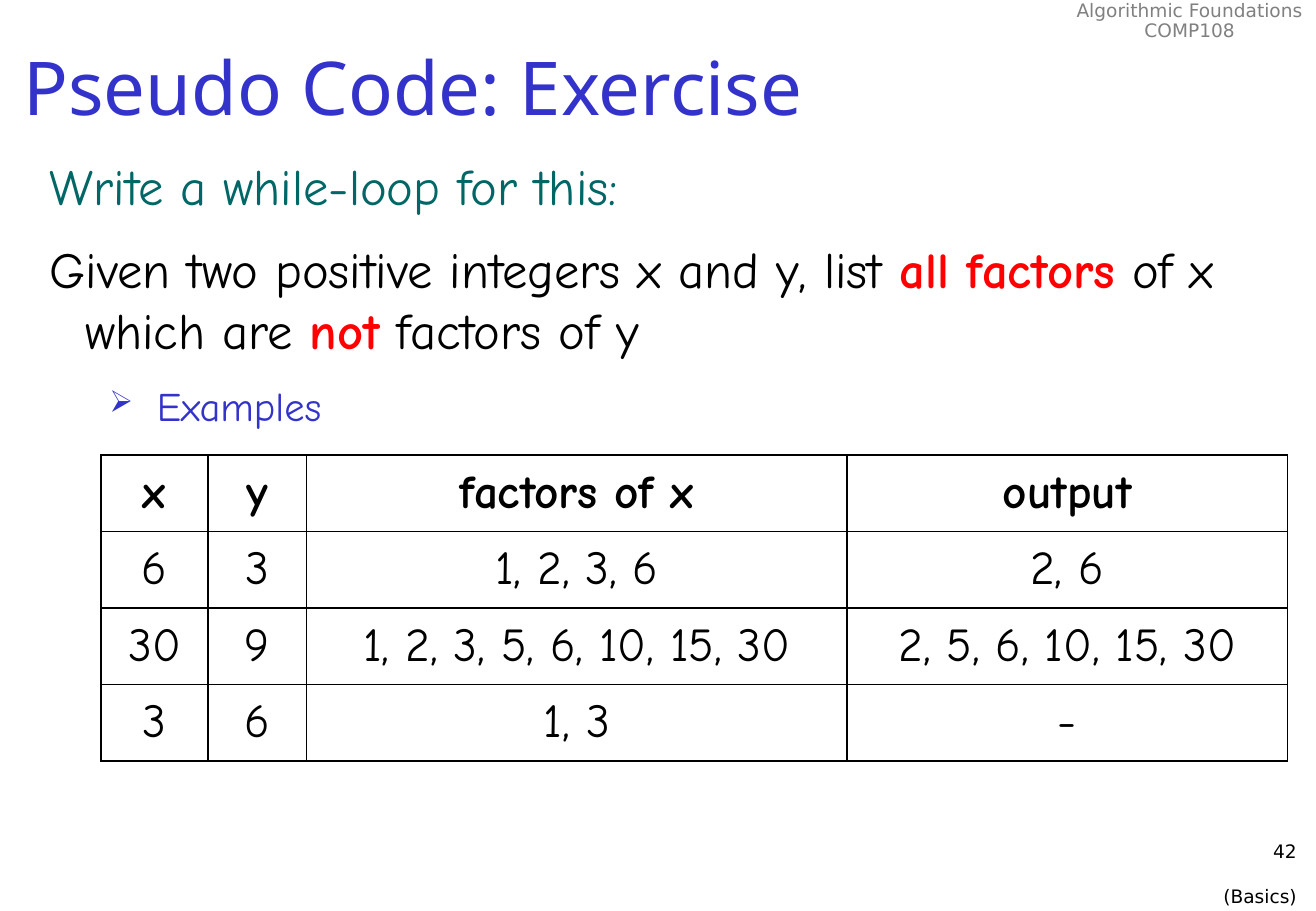
from dataclasses import dataclass

from pptx import Presentation
from pptx.dml.color import RGBColor
from pptx.enum.text import MSO_ANCHOR, MSO_AUTO_SIZE, PP_ALIGN
from pptx.oxml import parse_xml
from pptx.oxml.ns import nsdecls
from pptx.util import Cm, Pt


@dataclass(frozen=True)
class Theme:
    title_font: str = "Noto Sans"
    body_font: str = "Comic Neue"
    small_font: str = "DejaVu Sans"
    blue: str = "3333CC"
    teal: str = "006666"
    red: str = "FF0000"
    black: str = "000000"
    grey: str = "808080"
    white: str = "FFFFFF"
    title_size: int = 44
    body_size: int = 30
    table_size: int = 28
    sub_size: int = 24
    small_size: int = 11


class SlideBuilder:
    def __init__(self, prs, theme):
        self.theme = theme
        self.s = prs.slides.add_slide(prs.slide_layouts[5])

    def place(self, shape, box):
        for name, value in zip(("left", "top", "width", "height"), box):
            setattr(shape, name, Cm(value))

    def add_runs(self, p, runs, font, size, para=None):
        """Fill a paragraph with (text, colour, bold) runs."""
        for name, value in (para or {}).items():
            setattr(p, name, value)
        for text, colour, bold in runs:
            r = p.add_run()
            r.text = text
            for name, value in {"name": font, "size": Pt(size), "bold": bold}.items():
                setattr(r.font, name, value)
            r.font.color.rgb = RGBColor.from_string(colour)

    def title(self, text, box):
        sp = self.s.shapes.title
        self.place(sp, box)
        tf = sp.text_frame
        tf.auto_size = MSO_AUTO_SIZE.NONE
        tf.vertical_anchor = MSO_ANCHOR.MIDDLE
        t = self.theme
        self.add_runs(tf.paragraphs[0], [(text, t.blue, False)], t.title_font,
                      t.title_size, {"alignment": PP_ALIGN.LEFT})

    def text_box(self, box, wrap=True):
        tf = self.s.shapes.add_textbox(*map(Cm, box)).text_frame
        tf.word_wrap = wrap
        return tf

    def small_text(self, lines, box, colour, para, gap=0, wrap=True):
        tf = self.text_box(box, wrap)
        for i, line in enumerate(lines):
            p = tf.add_paragraph() if i else tf.paragraphs[0]
            spacing = {"space_before": Pt(gap if i else 0)}
            self.add_runs(p, [(line, colour, False)], self.theme.small_font,
                          self.theme.small_size, para | spacing)

    def body(self, items, box):
        """Each item: runs, size, left margin, hanging indent, bullet."""
        tf = self.text_box(box)
        for i, (runs, size, margin, hang, bullet) in enumerate(items):
            p = tf.add_paragraph() if i else tf.paragraphs[0]
            self.add_runs(p, runs, self.theme.body_font, size,
                          {"space_before": Pt(6.5), "space_after": Pt(6.5)})
            pPr = p._p.get_or_add_pPr()
            pPr.set("marL", str(Cm(margin)))
            pPr.set("indent", str(-Cm(hang)))
            if bullet:
                pPr.append(parse_xml(f'<a:buSzPct {nsdecls("a")} val="75000"/>'))
                pPr.append(parse_xml(f'<a:buChar {nsdecls("a")} char="{bullet}"/>'))

    def table(self, rows, widths, row_height, left, top):
        t = self.theme
        box = (left, top, sum(widths), row_height * len(rows))
        table = self.s.shapes.add_table(len(rows), len(widths), *map(Cm, box)).table
        table.first_row = table.horz_banding = False
        for column, width in zip(table.columns, widths):
            column.width = Cm(width)
        for i, row in enumerate(rows):
            table.rows[i].height = Cm(row_height)
            for j, text in enumerate(row):
                cell = table.cell(i, j)
                cell.vertical_anchor = MSO_ANCHOR.MIDDLE
                cell.fill.solid()
                cell.fill.fore_color.rgb = RGBColor.from_string(t.white)
                self.add_runs(cell.text_frame.paragraphs[0], [(text, t.black, i == 0)],
                              t.body_font, t.table_size, {"alignment": PP_ALIGN.CENTER})
                self.borders(cell)

    def borders(self, cell):
        tcPr = cell._tc.get_or_add_tcPr()
        for k, side in enumerate("LRTB"):
            tcPr.insert(k, parse_xml(
                f'<a:ln{side} {nsdecls("a")} w="{Pt(1)}"><a:solidFill>'
                f'<a:srgbClr val="{self.theme.black}"/></a:solidFill></a:ln{side}>'))


def main():
    prs = Presentation()
    prs.slide_width, prs.slide_height = Cm(27.51), Cm(19.05)
    t = Theme()
    slide = SlideBuilder(prs, t)

    # Course header and page footer
    slide.small_text(["Algorithmic Foundations", "COMP108"], (22.23, -0.1, 5.28, 1.09),
                     t.grey, {"alignment": PP_ALIGN.CENTER, "line_spacing": 0.9}, wrap=False)
    slide.small_text(["42", "(Basics)"], (21.62, 17.45, 5.74, 1.27),
                     t.black, {"alignment": PP_ALIGN.RIGHT}, gap=13)

    # Title and task
    slide.title("Pseudo Code: Exercise", (0.23, 0.2, 27.28, 3.18))
    task = [
        ("Given two positive integers x and y, list ", t.black, False),
        ("all factors", t.red, True),
        (" of x which are ", t.black, False),
        ("not", t.red, True),
        (" factors of y", t.black, False),
    ]
    slide.body([
        ([("Write a while-loop for this:", t.teal, False)], t.body_size, 0.74, 0.74, None),
        (task, t.body_size, 0.74, 0.74, None),
        ([("Examples", t.blue, False)], t.sub_size, 2.24, 0.99, "➢"),
    ], (0.79, 3.12, 26.59, 15.24))

    # Examples table
    slide.table([
        ("x", "y", "factors of x", "output"),
        ("6", "3", "1, 2, 3, 6", "2, 6"),
        ("30", "9", "1, 2, 3, 5, 6, 10, 15, 30", "2, 5, 6, 10, 15, 30"),
        ("3", "6", "1, 3", "-"),
    ], (2.24, 2.06, 11.3, 9.2), 1.6, 2.11, 9.51)

    prs.save("out.pptx")


if __name__ == "__main__":
    main()
